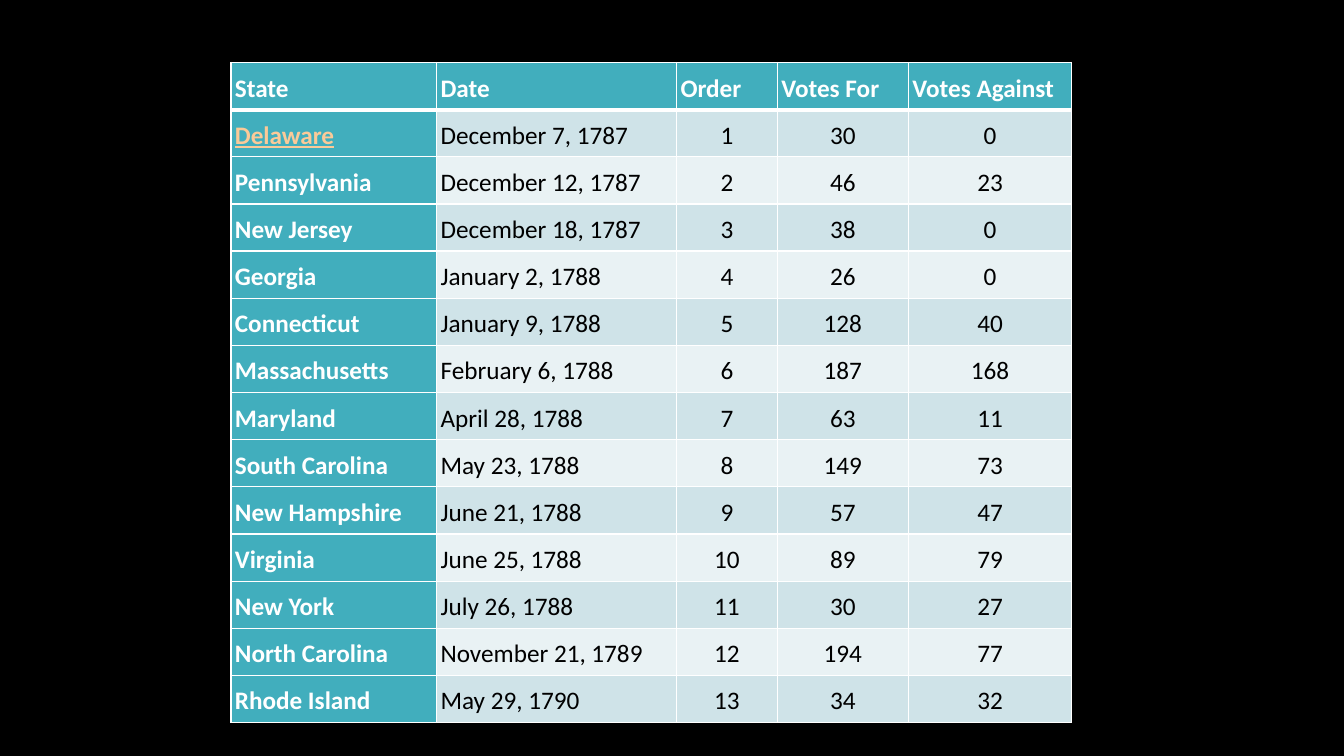
from lxml.etree import SubElement
from pptx import Presentation
from pptx.dml.color import RGBColor
from pptx.enum.text import MSO_ANCHOR as Anchor, PP_ALIGN as Align
from pptx.oxml.ns import qn
from pptx.util import Inches, Pt

BLACK = RGBColor(0x00, 0x00, 0x00)
WHITE = RGBColor(0xFF, 0xFF, 0xFF)
TEAL = RGBColor(0x41, 0xAE, 0xBD)
BAND_DARK = RGBColor(0xCF, 0xE3, 0xE8)
BAND_LIGHT = RGBColor(0xE9, 0xF2, 0xF4)
PEACH = RGBColor(0xFB, 0xCA, 0x98)

COLUMN_WIDTHS = [2.04, 2.38, 1, 1.3, 1.62]
HEADINGS = ["State", "Date", "Order", "Votes For", "Votes Against"]
# State, date of ratification, votes for, votes against, in order of ratification
RATIFICATIONS = [
    ("Delaware", "December 7, 1787", 30, 0),
    ("Pennsylvania", "December 12, 1787", 46, 23),
    ("New Jersey", "December 18, 1787", 38, 0),
    ("Georgia", "January 2, 1788", 26, 0),
    ("Connecticut", "January 9, 1788", 128, 40),
    ("Massachusetts", "February 6, 1788", 187, 168),
    ("Maryland", "April 28, 1788", 63, 11),
    ("South Carolina", "May 23, 1788", 149, 73),
    ("New Hampshire", "June 21, 1788", 57, 47),
    ("Virginia", "June 25, 1788", 89, 79),
    ("New York", "July 26, 1788", 30, 27),
    ("North Carolina", "November 21, 1789", 194, 77),
    ("Rhode Island", "May 29, 1790", 34, 32),
]


class SlideBuilder:
    """Holds the table style and the current slide."""

    font_name = "Calibri"
    font_size = Pt(18)
    line_spacing = 1.15
    cell_margin = Inches(0.04)
    thin, thick = Pt(1), Pt(3)

    def __init__(self, slide):
        self.slide = slide

    def background(self, color):
        fill = self.slide.background.fill
        fill.solid()
        fill.fore_color.rgb = color

    def table(self, rows, left, top, height, widths):
        frame = self.slide.shapes.add_table(
            len(rows), len(widths), Inches(left), Inches(top),
            Inches(sum(widths)), Inches(height))
        table = frame.table
        table.first_col = True
        for column, width in zip(table.columns, widths):
            column.width = Inches(width)
        for row_index, row in enumerate(rows):
            for column_index, text in enumerate(row):
                self.cell(table.cell(row_index, column_index), str(text),
                          row_index, column_index)
        return table

    def cell(self, cell, text, row, column):
        is_heading = row == 0 or column == 0
        # A thick rule parts the headings from the body
        self.borders(cell, L=self.thin, R=self.thin,
                     T=self.thick if row == 1 else self.thin,
                     B=self.thick if row == 0 else self.thin)
        cell.fill.solid()
        band = BAND_DARK if row % 2 else BAND_LIGHT
        cell.fill.fore_color.rgb = TEAL if is_heading else band
        cell.vertical_anchor = Anchor.MIDDLE
        cell.margin_left = cell.margin_right = self.cell_margin
        cell.margin_top = cell.margin_bottom = self.cell_margin

        cell.text = text
        paragraph = cell.text_frame.paragraphs[0]
        paragraph.line_spacing = self.line_spacing
        paragraph.alignment = Align.CENTER if row and column > 1 else Align.LEFT
        font = paragraph.font
        font.name, font.size = self.font_name, self.font_size
        font.bold = is_heading
        font.color.rgb = WHITE if is_heading else BLACK

    def borders(self, cell, **widths):
        properties = cell._tc.get_or_add_tcPr()
        for side, width in widths.items():
            line = SubElement(properties, qn(f"a:ln{side}"), w=str(width))
            fill = SubElement(line, qn("a:solidFill"))
            SubElement(fill, qn("a:srgbClr"), val=str(WHITE))

    def highlight(self, cell, color):
        font = cell.text_frame.paragraphs[0].font
        font.color.rgb = color
        font.underline = True


def main():
    presentation = Presentation()
    presentation.slide_width = Inches(13.33)
    presentation.slide_height = Inches(7.5)
    builder = SlideBuilder(
        presentation.slides.add_slide(presentation.slide_layouts[6]))
    builder.background(BLACK)

    # Ratification votes, numbered by date
    rows = [HEADINGS] + [
        (state, date, order, votes_for, votes_against)
        for order, (state, date, votes_for, votes_against)
        in enumerate(RATIFICATIONS, start=1)]
    table = builder.table(rows, 2.29, 0.62, 6.55, COLUMN_WIDTHS)

    # The first state to ratify stands out
    builder.highlight(table.cell(1, 0), PEACH)

    presentation.save("out.pptx")


if __name__ == "__main__":
    main()
